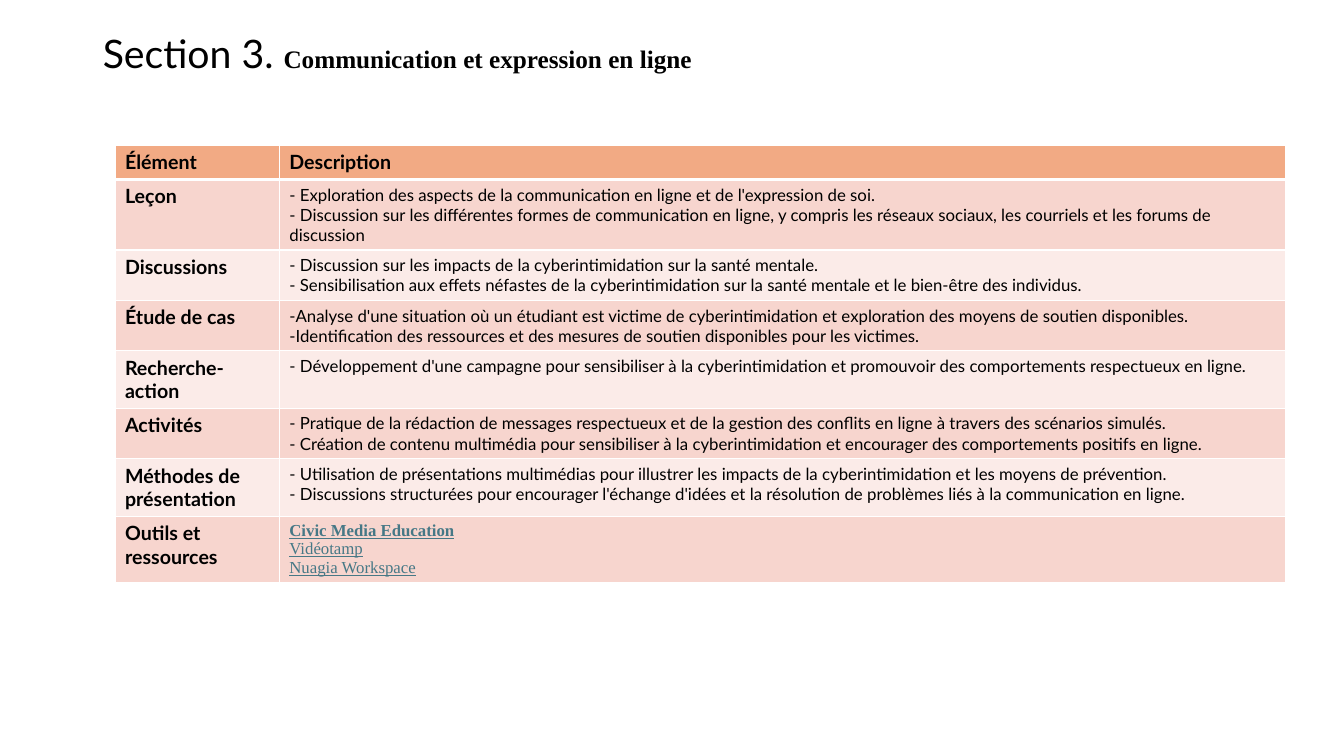
from lxml.etree import fromstring
from pptx import Presentation
from pptx.dml.color import RGBColor
from pptx.enum.text import MSO_ANCHOR, MSO_AUTO_SIZE, PP_ALIGN
from pptx.util import Inches, Pt

DRAWING_NS = "http://schemas.openxmlformats.org/drawingml/2006/main"
HEADER, DARK_BAND, LIGHT_BAND = "F2AA84", "F7D5CE", "FBEBE8"
BLACK, WHITE, LINK = "000000", "FFFFFF", "467886"


def add_text(paragraph, text, size, font="Lato", bold=False, color=BLACK, underline=False):
    run = paragraph.add_run()
    run.text = text
    run.font.size, run.font.name = Pt(size), font
    run.font.bold, run.font.underline = bold, underline
    run.font.color.rgb = RGBColor.from_string(color)


def style_cell(cell, fill, bottom_width):
    cell.fill.solid()
    cell.fill.fore_color.rgb = RGBColor.from_string(fill)
    for position, side in enumerate("LRTB"):
        width = Pt(bottom_width if side == "B" else 1)
        border = fromstring(
            f'<a:ln{side} xmlns:a="{DRAWING_NS}" w="{width}"><a:solidFill>'
            f'<a:srgbClr val="{WHITE}"/></a:solidFill></a:ln{side}>')
        cell._tc.get_or_add_tcPr().insert(position, border)


presentation = Presentation()
presentation.slide_width, presentation.slide_height = Inches(13.33), Inches(7.5)
slide = presentation.slides.add_slide(presentation.slide_layouts[5])

# Section title
title = slide.shapes.title
title.left, title.top = Inches(0.92), Inches(0.02)
title.width, title.height = Inches(11.5), Inches(1.06)
title.text_frame.vertical_anchor = MSO_ANCHOR.MIDDLE
title.text_frame.auto_size = MSO_AUTO_SIZE.NONE
heading = title.text_frame.paragraphs[0]
heading.alignment = PP_ALIGN.LEFT
heading.line_spacing = 0.9
add_text(heading, "Section 3. ", 28)
add_text(heading, "Communication et expression en ligne", 18, "Times New Roman", bold=True)

# Lesson plan: element, row height, description lines
plan = [
    ("Élément", 0.34, ["Description"]),
    ("Leçon", 0.69, [
        "- Exploration des aspects de la communication en ligne et de l'expression de soi.",
        "- Discussion sur les différentes formes de communication en ligne, y compris les réseaux sociaux, les courriels et les forums de discussion"]),
    ("Discussions", 0.5, [
        "- Discussion sur les impacts de la cyberintimidation sur la santé mentale.",
        "- Sensibilisation aux effets néfastes de la cyberintimidation sur la santé mentale et le bien-être des individus."]),
    ("Étude de cas", 0.5, [
        "-Analyse d'une situation où un étudiant est victime de cyberintimidation et exploration des moyens de soutien disponibles.",
        "-Identification des ressources et des mesures de soutien disponibles pour les victimes."]),
    ("Recherche-action", 0.57, [
        "- Développement d'une campagne pour sensibiliser à la cyberintimidation et promouvoir des comportements respectueux en ligne."]),
    ("Activités", 0.5, [
        "- Pratique de la rédaction de messages respectueux et de la gestion des conflits en ligne à travers des scénarios simulés.",
        "- Création de contenu multimédia pour sensibiliser à la cyberintimidation et encourager des comportements positifs en ligne."]),
    ("Méthodes de présentation", 0.57, [
        "- Utilisation de présentations multimédias pour illustrer les impacts de la cyberintimidation et les moyens de prévention.",
        "- Discussions structurées pour encourager l'échange d'idées et la résolution de problèmes liés à la communication en ligne."]),
    ("Outils et ressources", 0.65, [
        "Civic Media Education", "Vidéotamp", "Nuagia Workspace"]),
]

# Plan table
plan_height = sum(height for _, height, _ in plan)
plan_table = slide.shapes.add_table(
    len(plan), 2, Inches(1.14), Inches(1.44), Inches(11.61), Inches(plan_height)).table
plan_table.first_row = True
plan_table.horz_banding = False
plan_table.columns[0].width, plan_table.columns[1].width = Inches(1.63), Inches(9.98)

for row, (element, height, lines) in enumerate(plan):
    plan_table.rows[row].height = Inches(height)
    is_header, is_resources = row == 0, row == len(plan) - 1
    fill = HEADER if is_header else DARK_BAND if row % 2 else LIGHT_BAND
    element_cell, description_cell = plan_table.cell(row, 0), plan_table.cell(row, 1)
    for cell in (element_cell, description_cell):
        style_cell(cell, fill, 3 if is_header else 1)
    add_text(element_cell.text_frame.paragraphs[0], element, 14, bold=True)

    description = description_cell.text_frame
    for index, line in enumerate(lines):
        paragraph = description.add_paragraph() if index else description.paragraphs[0]
        if is_resources:
            add_text(paragraph, line, 12, "Times New Roman", index == 0, LINK, underline=True)
        else:
            add_text(paragraph, line, 14 if is_header else 12, bold=is_header)

presentation.save("out.pptx")
